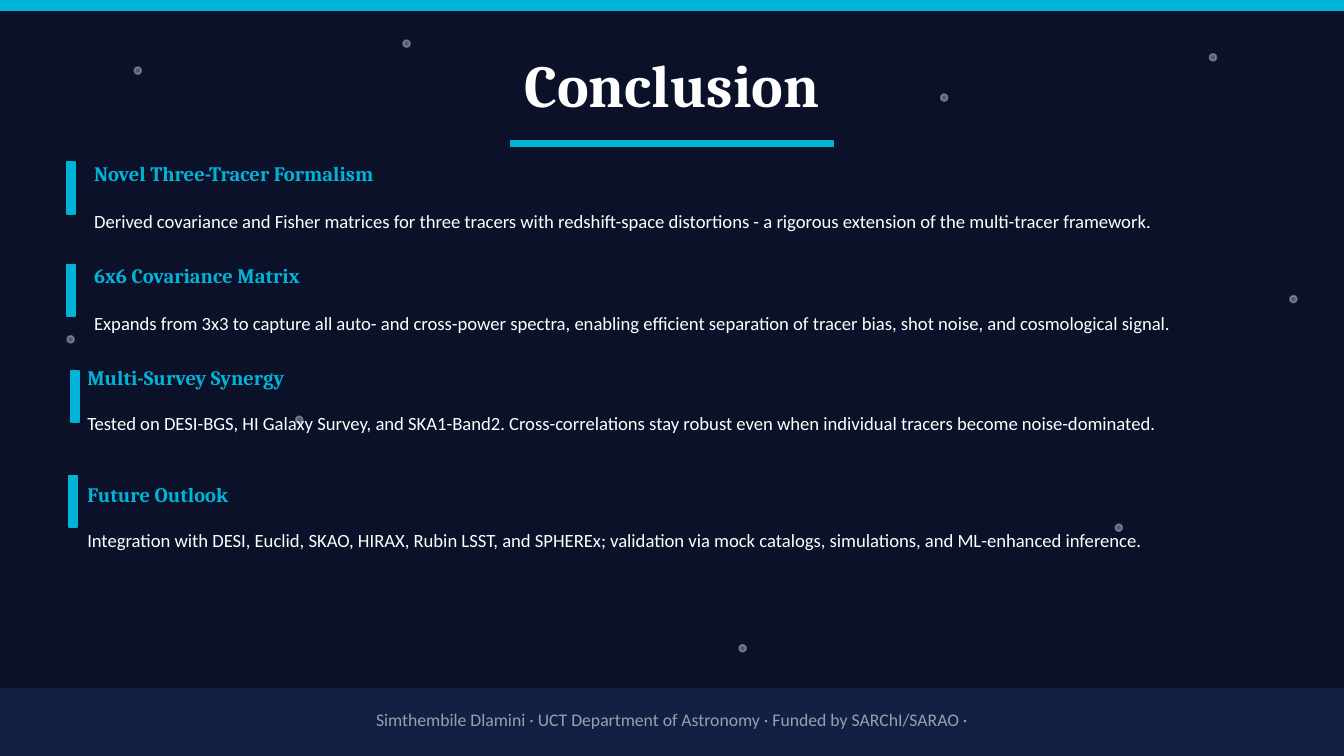
from dataclasses import dataclass

import lxml.etree
import pptx
import pptx.dml.color
import pptx.enum.shapes
import pptx.enum.text
import pptx.oxml.ns
import pptx.util

Cm = pptx.util.Cm
RGBColor = pptx.dml.color.RGBColor
Shape = pptx.enum.shapes.MSO_SHAPE
Align = pptx.enum.text.PP_ALIGN

NIGHT = RGBColor(0x0A, 0x11, 0x28)
NAVY = RGBColor(0x12, 0x20, 0x44)
CYAN = RGBColor(0x00, 0xB4, 0xD8)
WHITE = RGBColor(0xFF, 0xFF, 0xFF)
GREY = RGBColor(0x90, 0xA4, 0xAE)

PAGE_WIDTH, PAGE_HEIGHT = 25.4, 14.29
STAR_SIZE = 0.13
STARS = [
    (2.54, 1.27), (7.62, 0.76), (17.78, 1.78), (22.86, 1.02), (1.27, 6.35),
    (5.59, 7.87), (13.97, 12.19), (21.08, 9.91), (24.38, 5.59),
]


@dataclass
class Area:
    """A rectangle on the page, in centimetres."""
    left: float
    top: float
    width: float
    height: float


@dataclass
class Style:
    font: str
    size: float
    color: RGBColor
    bold: bool = False
    align: Align = Align.LEFT


@dataclass
class Finding:
    heading: str
    detail: str
    bar_left: float
    bar_top: float
    text_left: float
    heading_top: float
    detail_top: float


TITLE = Style("Cambria", 32, WHITE, True, Align.CENTER)
HEADING = Style("Cambria", 11, CYAN, True)
DETAIL = Style("Calibri", 10, WHITE)
FOOTER = Style("Calibri", 9.5, GREY, align=Align.CENTER)

FINDINGS = [
    Finding("Novel Three-Tracer Formalism",
            "Derived covariance and Fisher matrices for three tracers with redshift-space "
            "distortions - a rigorous extension of the multi-tracer framework.",
            1.27, 3.07, 1.78, 2.92, 3.66),
    Finding("6x6 Covariance Matrix",
            "Expands from 3x3 to capture all auto- and cross-power spectra, enabling efficient "
            "separation of tracer bias, shot noise, and cosmological signal.",
            1.27, 5.0, 1.78, 4.85, 5.59),
    Finding("Multi-Survey Synergy",
            "Tested on DESI-BGS, HI Galaxy Survey, and SKA1-Band2. Cross-correlations stay "
            "robust even when individual tracers become noise-dominated.",
            1.35, 7.01, 1.65, 6.78, 7.49),
    Finding("Future Outlook",
            "Integration with DESI, Euclid, SKAO, HIRAX, Rubin LSST, and SPHEREx; validation "
            "via mock catalogs, simulations, and ML-enhanced inference.",
            1.3, 8.99, 1.65, 8.99, 9.7),
]


def add_block(page, area: Area, color: RGBColor, kind=Shape.RECTANGLE):
    """Draw a shape whose outline has the colour of its fill."""
    block = page.shapes.add_shape(
        kind, Cm(area.left), Cm(area.top), Cm(area.width), Cm(area.height))
    block.shadow.inherit = False
    block.fill.solid()
    block.fill.fore_color.rgb = color
    block.line.color.rgb = color
    block.line.width = pptx.util.Pt(1)
    return block


def add_star(page, left: float, top: float) -> None:
    star = add_block(page, Area(left, top, STAR_SIZE, STAR_SIZE), WHITE, Shape.OVAL)
    for color in star.element.spPr.findall(".//" + pptx.oxml.ns.qn("a:srgbClr")):
        lxml.etree.SubElement(color, pptx.oxml.ns.qn("a:alpha"), val="30000")


def write_text(box, area: Area, text: str, style: Style) -> None:
    box.left, box.top = Cm(area.left), Cm(area.top)
    box.width, box.height = Cm(area.width), Cm(area.height)
    frame = box.text_frame
    frame.text = text
    frame.word_wrap = True
    frame.auto_size = pptx.enum.text.MSO_AUTO_SIZE.NONE
    frame.vertical_anchor = pptx.enum.text.MSO_ANCHOR.MIDDLE
    frame.margin_left = frame.margin_right = frame.margin_top = frame.margin_bottom = 0
    para = frame.paragraphs[0]
    para.alignment = style.align
    font = para.runs[0].font
    font.name, font.size, font.bold = style.font, pptx.util.Pt(style.size), style.bold
    font.color.rgb = style.color


def add_text(page, area: Area, text: str, style: Style) -> None:
    write_text(page.shapes.add_textbox(0, 0, 0, 0), area, text, style)


def add_finding(page, finding: Finding) -> None:
    add_block(page, Area(finding.bar_left, finding.bar_top, 0.15, 0.97), CYAN)
    add_text(page, Area(finding.text_left, finding.heading_top, 22.86, 0.71),
             finding.heading, HEADING)
    add_text(page, Area(finding.text_left, finding.detail_top, 22.86, 1.02),
             finding.detail, DETAIL)


def main() -> None:
    deck = pptx.Presentation()
    deck.slide_width, deck.slide_height = Cm(PAGE_WIDTH), Cm(PAGE_HEIGHT)
    page = deck.slides.add_slide(deck.slide_layouts.get_by_name("Title Only"))
    page.background.fill.solid()
    page.background.fill.fore_color.rgb = NIGHT

    for left, top in STARS:
        add_star(page, left, top)
    add_block(page, Area(0, 0, PAGE_WIDTH, 0.2), CYAN)
    write_text(page.shapes.title, Area(1.02, 0.76, 23.37, 1.65), "Conclusion", TITLE)
    add_block(page, Area(9.65, 2.67, 6.1, 0.1), CYAN)
    for finding in FINDINGS:
        add_finding(page, finding)
    add_block(page, Area(0, 13.02, PAGE_WIDTH, 1.27), NAVY)
    add_text(page, Area(0.51, 13.11, 24.38, 0.97),
             "Simthembile Dlamini · UCT Department of Astronomy · Funded by SARChI/SARAO ·",
             FOOTER)
    deck.save("out.pptx")


if __name__ == "__main__":
    main()
